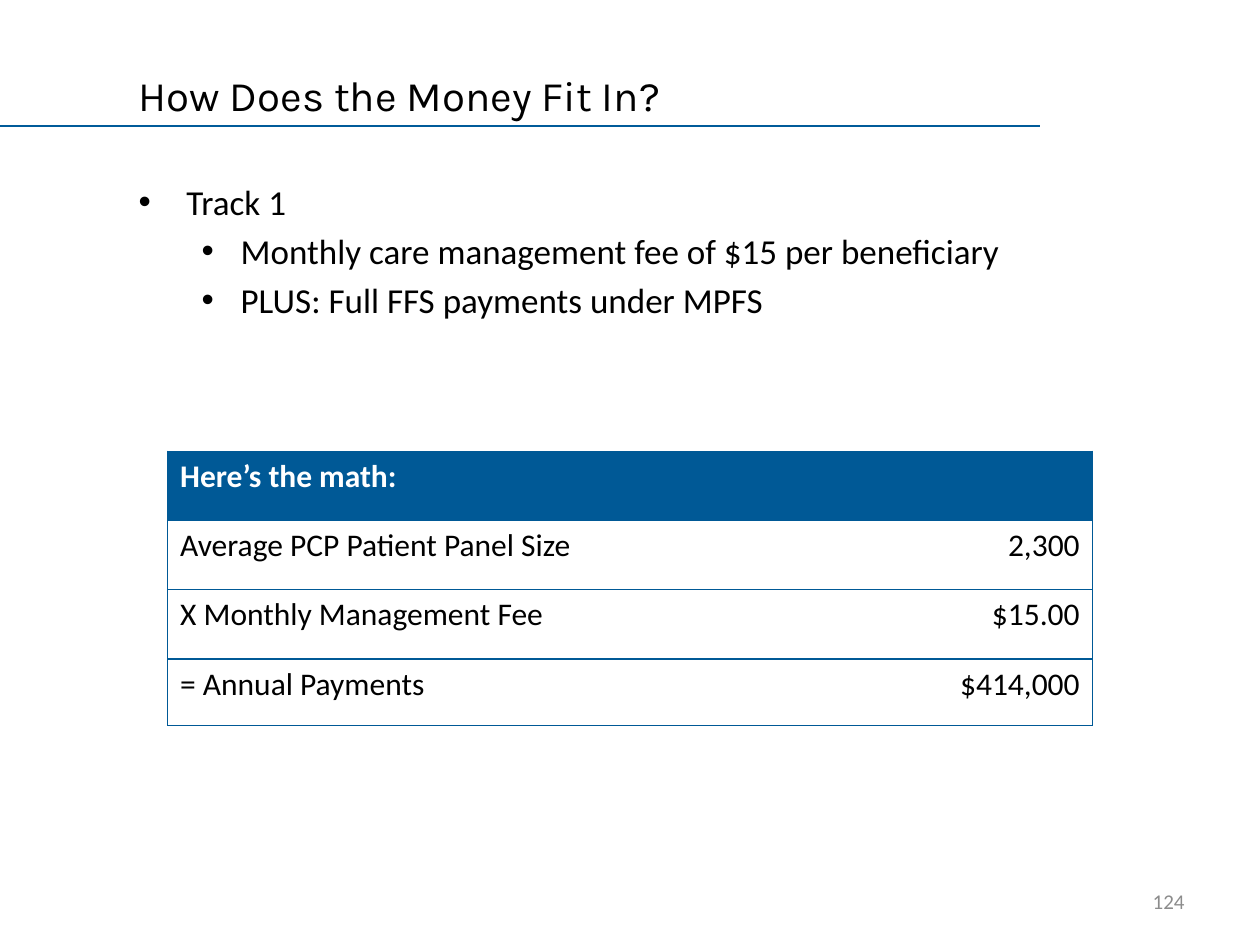
"""Build the slide on how the money fits in, with a payment table."""
from lxml.etree import SubElement
from pptx import Presentation
from pptx.dml.color import RGBColor
from pptx.enum.shapes import MSO_CONNECTOR
from pptx.enum.text import MSO_ANCHOR, PP_ALIGN
from pptx.oxml.ns import qn
from pptx.util import Inches, Pt

COLORS = {"rule": "005B99", "table": "005996", "text": "000000",
          "white": "FFFFFF", "number": "8C8C8C"}


def place(shape, left, top, width, height):
    shape.left, shape.top = Inches(left), Inches(top)
    shape.width, shape.height = Inches(width), Inches(height)


def style(paragraph, size, color="text", font="Calibri", bold=False):
    paragraph.font.size = Pt(size)
    paragraph.font.name = font
    paragraph.font.bold = bold
    paragraph.font.color.rgb = RGBColor.from_string(COLORS[color])
    for run in paragraph.runs:
        run.font.size = Pt(size)
        run.font.name = font
        run.font.bold = bold
        run.font.color.rgb = RGBColor.from_string(COLORS[color])


presentation = Presentation()
presentation.slide_width, presentation.slide_height = Inches(10), Inches(7.5)
slide = presentation.slides.add_slide(presentation.slide_layouts[1])

rule = slide.shapes.add_connector(
    MSO_CONNECTOR.STRAIGHT, 0, Inches(1), Inches(8.25), Inches(1))
rule.line.color.rgb = RGBColor.from_string(COLORS["rule"])
rule.line.width = Pt(0.75)
SubElement(rule.element.spPr, qn("a:effectLst"))

title = slide.shapes.title
place(title, 1, 0.5, 7, 0.5)
title.text_frame.text = "How Does the Money Fit In?"
title.text_frame.vertical_anchor = MSO_ANCHOR.MIDDLE
title.text_frame.paragraphs[0].alignment = PP_ALIGN.LEFT
style(title.text_frame.paragraphs[0], 24, font="Karla")

bullets = [
    (0, "Track 1"),
    (1, "Monthly care management fee of $15 per beneficiary"),
    (1, "PLUS: Full FFS payments under MPFS"),
]
indents = [(0.38, -0.38), (0.81, -0.31)]
body = slide.placeholders[1]
place(body, 1, 1.38, 7.98, 4.95)
body.text_frame.text = "\n".join(text for level, text in bullets)
for index, (level, text) in enumerate(bullets):
    paragraph = body.text_frame.paragraphs[index]
    paragraph.level = level
    margin, hanging = indents[level]
    properties = paragraph._p.get_or_add_pPr()
    properties.set("marL", str(Inches(margin)))
    properties.set("indent", str(Inches(hanging)))
    SubElement(properties, qn("a:buFont"), typeface="Arial")
    SubElement(properties, qn("a:buChar"), char="•")
    paragraph.space_before = Pt(4 if index else 0)
    style(paragraph, 20)

rows = [
    ("Here’s the math:", ""),
    ("Average PCP Patient Panel Size", "2,300"),
    ("X Monthly Management Fee", "$15.00"),
    ("= Annual Payments", "$414,000"),
]
row_heights = [0.55, 0.55, 0.55, 0.53]
table = slide.shapes.add_table(
    len(rows), 2, Inches(1.33), Inches(3.58),
    Inches(7.34), Inches(sum(row_heights))).table
for row_index, values in enumerate(rows):
    table.rows[row_index].height = Inches(row_heights[row_index])
    header = row_index == 0
    for column_index, value in enumerate(values):
        cell = table.cell(row_index, column_index)
        cell.text_frame.text = value
        paragraph = cell.text_frame.paragraphs[0]
        paragraph.alignment = PP_ALIGN.RIGHT if column_index else PP_ALIGN.LEFT
        style(paragraph, 18, "white" if header else "text", bold=header)
        properties = cell._tc.get_or_add_tcPr()
        outer, inner = ("a:lnR", "a:lnL") if column_index else ("a:lnL", "a:lnR")
        for side in ("a:lnL", "a:lnR", "a:lnT", "a:lnB"):
            border = SubElement(properties, qn(side), w=str(Pt(0.75)))
            if side == inner:
                SubElement(border, qn("a:noFill"))
            else:
                fill = SubElement(border, qn("a:solidFill"))
                SubElement(fill, qn("a:srgbClr"), val=COLORS["table"])
        cell.fill.solid()
        cell.fill.fore_color.rgb = RGBColor.from_string(
            COLORS["table" if header else "white"])

page_number = slide.shapes.add_textbox(
    Inches(7.17), Inches(6.95), Inches(2.33), Inches(0.4))
page_number.text_frame.word_wrap = True
page_number.text_frame.vertical_anchor = MSO_ANCHOR.MIDDLE
page_number.text_frame.text = "124"
page_number.text_frame.paragraphs[0].alignment = PP_ALIGN.RIGHT
style(page_number.text_frame.paragraphs[0], 12, "number")

presentation.save("out.pptx")
